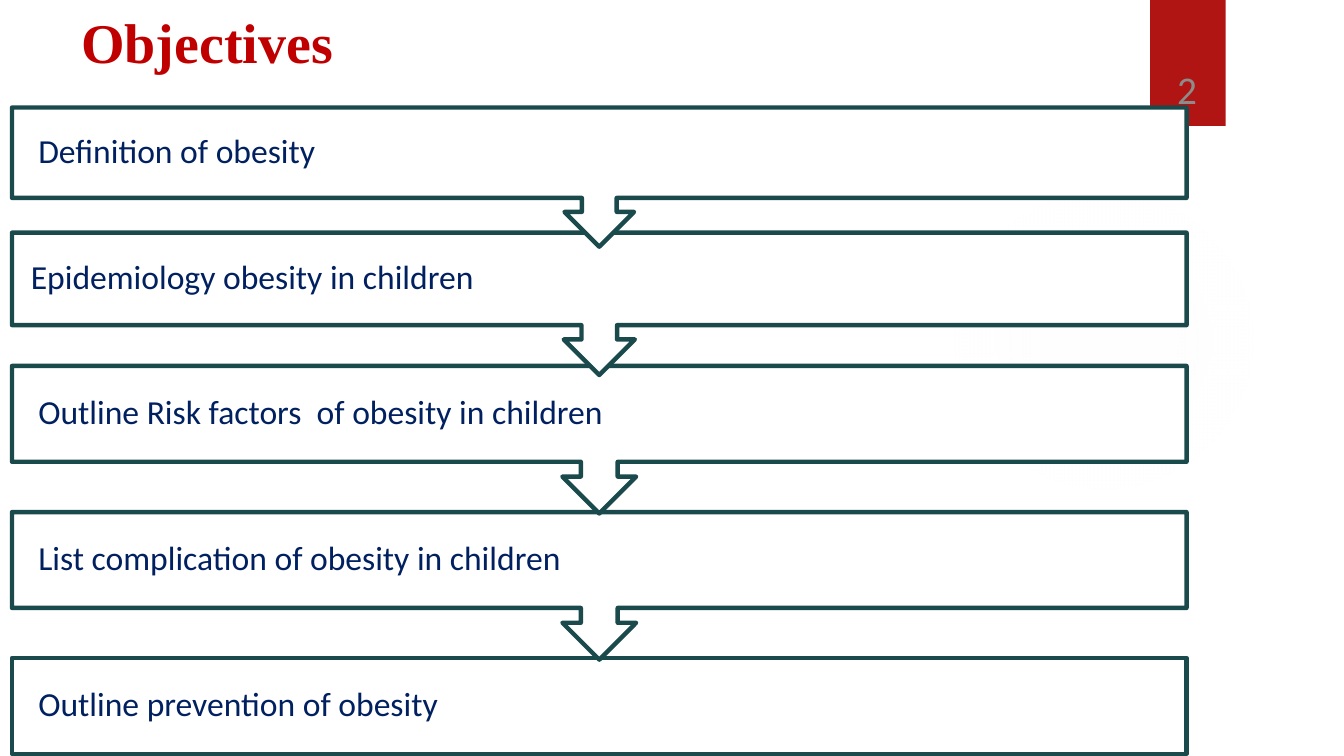
import pptx
import pptx.util
import pptx.dml.color
import pptx.enum.shapes
import pptx.enum.text
import pptx.oxml
from dataclasses import dataclass

Pt = pptx.util.Pt
SHAPE = pptx.enum.shapes.MSO_SHAPE
ANCHOR = pptx.enum.text.MSO_ANCHOR
ALIGN = pptx.enum.text.PP_ALIGN


@dataclass(frozen=True)
class Theme:
    box_fill: str = "FFFFFF"
    box_line: str = "1B4A4D"
    objective: str = "002060"
    title: str = "C00000"
    ribbon: str = "B01513"
    number: str = "8C8C8C"
    glow: str = "F3F3F3"
    body_font: str = "Calibri"
    title_font: str = "Times New Roman"
    title_size: float = 40
    objective_size: float = 24
    number_size: float = 28
    line_width: float = 3.15


theme = Theme()


def rgb(value):
    return pptx.dml.color.RGBColor.from_string(value)


def write(shape, text, *, size, color, font=theme.body_font, bold=False,
          align=ALIGN.LEFT, anchor=ANCHOR.TOP, inset=(7.2, 3.6),
          spacing=1.0, indent=0):
    frame = shape.text_frame
    frame.word_wrap = True
    frame.vertical_anchor = anchor
    frame.margin_left = frame.margin_right = Pt(inset[0])
    frame.margin_top = frame.margin_bottom = Pt(inset[1])
    paragraph = frame.paragraphs[0]
    paragraph.alignment = align
    paragraph.line_spacing = spacing
    if indent:
        paragraph._p.get_or_add_pPr().set("marL", str(Pt(indent)))
    run = paragraph.add_run()
    run.text = text
    run.font.name = font
    run.font.size = Pt(size)
    run.font.bold = bold
    run.font.color.rgb = rgb(color)


deck = pptx.Presentation()
deck.slide_width, deck.slide_height = Pt(960), Pt(540)
slide = deck.slides.add_slide(deck.slide_layouts[6])
shapes = slide.shapes

glow = shapes.add_shape(SHAPE.OVAL, Pt(677.5), Pt(131.8), Pt(221.8), Pt(221.8))
glow.shadow.inherit = False
glow.line.fill.background()
stops = "".join(
    f'<a:gs pos="{position * 1000}"><a:srgbClr val="{theme.glow}">'
    f'<a:alpha val="{opacity * 1000}"/></a:srgbClr></a:gs>'
    for position, opacity in ((0, 7), (36, 6), (69, 0)))
glow_fill = pptx.oxml.parse_xml(
    '<a:gradFill xmlns:a="http://schemas.openxmlformats.org/drawingml/2006/main">'
    f'<a:gsLst>{stops}</a:gsLst><a:path path="circle">'
    '<a:fillToRect l="50000" t="50000" r="50000" b="50000"/></a:path></a:gradFill>')
glow._element.spPr.find(pptx.oxml.ns.qn("a:prstGeom")).addnext(glow_fill)

ribbon = shapes.add_shape(SHAPE.RECTANGLE, Pt(821.5), 0, Pt(54), Pt(90))
ribbon.shadow.inherit = False
ribbon.fill.solid()
ribbon.fill.fore_color.rgb = rgb(theme.ribbon)
ribbon.line.fill.background()

title = shapes.add_textbox(Pt(51), Pt(2), Pt(304), Pt(55.7))
write(title, "Objectives", size=theme.title_size, color=theme.title,
      font=theme.title_font, bold=True)

objectives = [
    ("Outline prevention of obesity", 470, 68.5, 5.4),
    ("List complication of obesity in children", 365.8, 105.4, 5.4),
    ("Outline Risk factors  of obesity in children", 261.4, 105.4, 5.4),
    ("Epidemiology obesity in children", 166.2, 101.7, 0),
    ("Definition of obesity", 76.8, 99.4, 5.4),
]
for order, (objective, top, height, indent) in enumerate(objectives):
    outline = SHAPE.DOWN_ARROW_CALLOUT if order else SHAPE.RECTANGLE
    step = shapes.add_shape(outline, Pt(8.6), Pt(top), Pt(839), Pt(height))
    step.shadow.inherit = False
    step.fill.solid()
    step.fill.fore_color.rgb = rgb(theme.box_fill)
    step.line.color.rgb = rgb(theme.box_line)
    step.line.width = Pt(theme.line_width)
    write(step, objective, size=theme.objective_size, color=theme.objective,
          anchor=ANCHOR.MIDDLE, inset=(13.4, 13.4), spacing=0.9, indent=indent)

page_number = shapes.add_textbox(Pt(815), Pt(23), Pt(66), Pt(60.5))
write(page_number, "2", size=theme.number_size, color=theme.number,
      align=ALIGN.CENTER, anchor=ANCHOR.BOTTOM)

deck.save("out.pptx")
